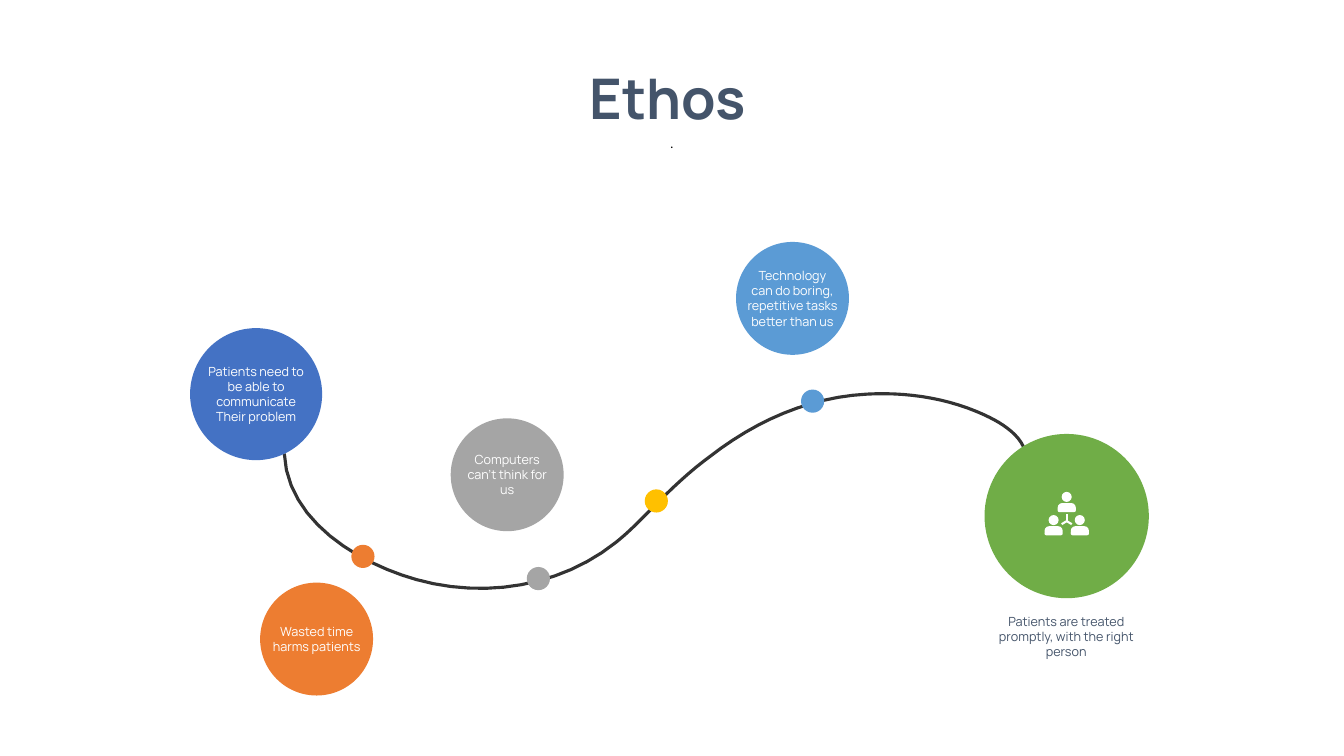
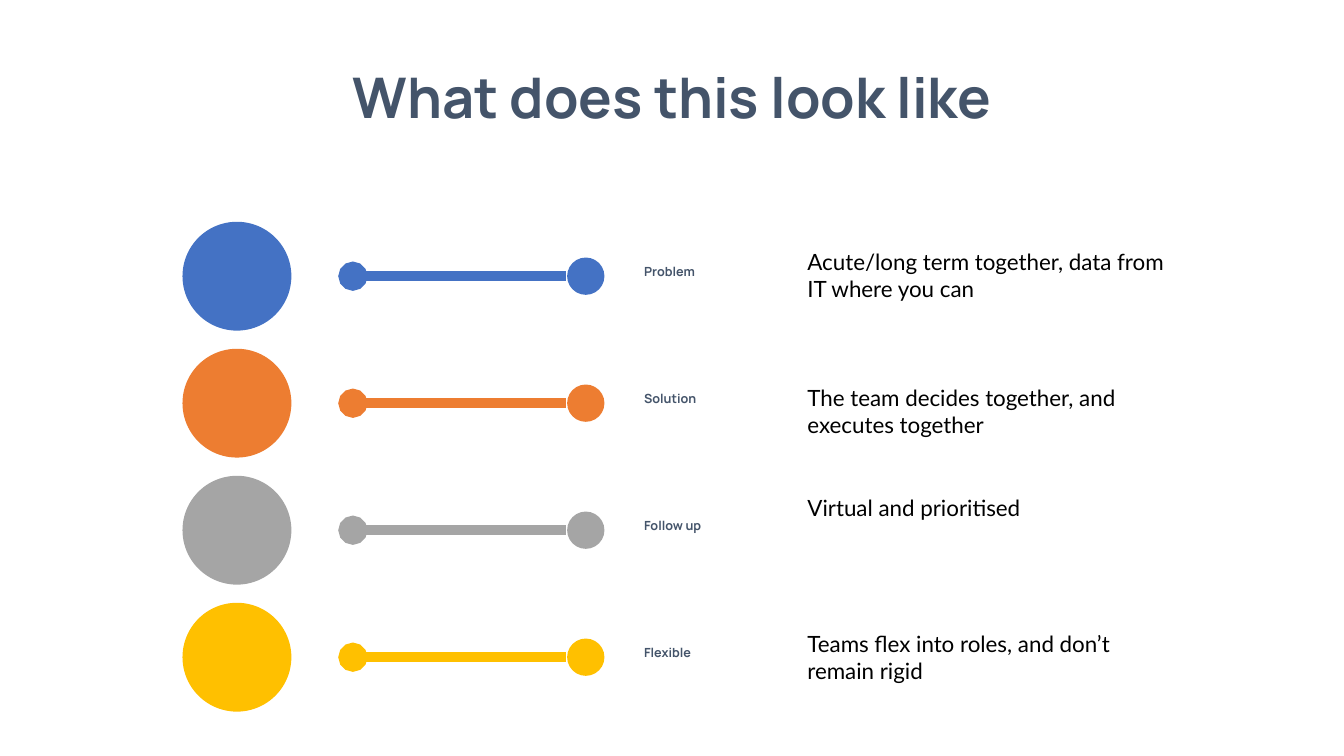
"""Build the ethos path and the practice rows as two slides."""
import lxml.etree
import pptx
import pptx.dml.color
import pptx.enum.shapes
import pptx.enum.text
import pptx.oxml.ns
import pptx.util

Inches = pptx.util.Inches
RGBColor = pptx.dml.color.RGBColor
SHAPE = pptx.enum.shapes.MSO_SHAPE
ALIGN = pptx.enum.text.PP_ALIGN

BLUE = RGBColor(0x44, 0x72, 0xC4)
ORANGE = RGBColor(0xED, 0x7D, 0x31)
GREY = RGBColor(0xA5, 0xA5, 0xA5)
GOLD = RGBColor(0xFF, 0xC0, 0x00)
SKY = RGBColor(0x5B, 0x9B, 0xD5)
GREEN = RGBColor(0x70, 0xAD, 0x47)
SLATE = RGBColor(0x44, 0x54, 0x6A)
DARK = RGBColor(0x33, 0x33, 0x33)
WHITE = RGBColor(0xFF, 0xFF, 0xFF)
BLACK = RGBColor(0x00, 0x00, 0x00)

TITLE = {"name": "Manrope", "size": pptx.util.Pt(40), "bold": True}
LABEL = {"name": "Manrope", "size": pptx.util.Pt(9), "bold": True}
NOTE = {"name": "Manrope", "size": pptx.util.Pt(9)}
SMALL = {"name": "Lato", "size": pptx.util.Pt(9)}
BODY = {"name": "Lato", "size": pptx.util.Pt(16)}

CURVE = (
    ((0, 0.62), (0.03, 1.29), (0.74, 1.71), (1.31, 1.87)),
    ((1.31, 1.87), (1.99, 2.06), (2.74, 1.94), (3.29, 1.5)),
    ((3.29, 1.5), (3.44, 1.38), (3.57, 1.24), (3.7, 1.11)),
    ((3.7, 1.11), (3.87, 0.94), (4.03, 0.79), (4.22, 0.65)),
    ((4.22, 0.65), (4.67, 0.3), (5.2, 0.06), (5.78, 0.03)),
    ((5.78, 0.03), (6.14, 0.01), (6.52, 0.06), (6.86, 0.2)),
    ((6.86, 0.2), (7.03, 0.27), (7.25, 0.38), (7.33, 0.55)),
)
STOPS = (
    (2.54, 3.91, 1.31, BLUE, 1.33, 4,
     ("Patients need to", "be able to communicate", "Their problem")),
    (3.14, 6.34, 1.12, ORANGE, 1.15, 2, ("Wasted time", "harms patients")),
    (5.03, 4.71, 1.12, GREY, 1.05, 3, ("Computers", "can’t think for us")),
    (7.86, 2.96, 1.12, SKY, 1.33, 4,
     ("Technology", "can do boring,", "repetitive tasks better than us")),
)
DOTS = ((3.6, 5.52, ORANGE), (5.34, 5.74, GREY), (6.51, 4.97, GOLD), (8.06, 3.98, SKY))
ROWS = (
    (BLUE, "Problem", "Acute/long term together, data from IT where you can", -0.33, 0.64),
    (ORANGE, "Solution", "The team decides together, and executes together", -0.24, 0.64),
    (GREY, "Follow up", "Virtual and prioritised", -0.41, 0.37),
    (GOLD, "Flexible", "Teams flex into roles, and don’t remain rigid", -0.32, 0.64),
)


def write(slide, box, lines, style, ink, align=ALIGN.LEFT, wrap=True):
    """Add a text box with one paragraph for each line."""
    frame = slide.shapes.add_textbox(*map(Inches, box)).text_frame
    frame.word_wrap = wrap
    frame.auto_size = pptx.enum.text.MSO_AUTO_SIZE.SHAPE_TO_FIT_TEXT
    for n, line in enumerate(lines):
        para = frame.add_paragraph() if n else frame.paragraphs[0]
        para.alignment = align
        run = para.add_run()
        run.text = line
        for key, value in style.items():
            setattr(run.font, key, value)
        run.font.color.rgb = ink


def head(slide, box, text):
    """Add the slide title."""
    write(slide, box, [text], TITLE, SLATE, ALIGN.CENTER, False)


def solid(parent, kind, box, fill):
    """Add a plain filled shape."""
    shape = parent.shapes.add_shape(kind, *map(Inches, box))
    shape.shadow.inherit = False
    shape.fill.solid()
    shape.fill.fore_color.rgb = fill
    shape.line.fill.background()
    return shape


def disc(parent, x, y, size, fill):
    """Add a circle around a centre point."""
    return solid(parent, SHAPE.OVAL, (x - size / 2, y - size / 2, size, size), fill)


def link(parent, start, end, ink, width):
    """Add a straight line without a shadow."""
    line = parent.shapes.add_connector(
        pptx.enum.shapes.MSO_CONNECTOR.STRAIGHT, *map(Inches, start + end))
    line.line.color.rgb = ink
    line.line.width = pptx.util.Pt(width)
    lxml.etree.SubElement(line._element.spPr, pptx.oxml.ns.qn("a:effectLst"))
    return line


def bend(a, b, c, d, steps=12):
    """Return points along a cubic curve, after its start."""
    times = [n / steps for n in range(1, steps + 1)]
    return [
        tuple(Inches((1 - t) ** 3 * p + 3 * (1 - t) ** 2 * t * q
                     + 3 * (1 - t) * t * t * r + t ** 3 * s)
              for p, q, r, s in zip(a, b, c, d))
        for t in times
    ]


def trail(slide, x, y):
    """Draw the winding path from its top left corner."""
    points = [point for part in CURVE for point in bend(*part)]
    pen = slide.shapes.build_freeform(*map(Inches, CURVE[0][0]))
    pen.add_line_segments(points, close=False)
    path = pen.convert_to_shape(Inches(x), Inches(y))
    path.shadow.inherit = False
    path.fill.background()
    path.line.color.rgb = DARK
    path.line.width = pptx.util.Pt(2.25)


def stop(slide, x, y, size, fill, width, count, lines):
    """Add a circle with its caption in the middle."""
    disc(slide, x, y, size, fill)
    tall = 0.1 + 0.15 * count
    write(slide, (x - width / 2, y - tall / 2, width, tall), lines, NOTE, WHITE, ALIGN.CENTER)


def team(slide, x, y):
    """Draw three linked people around a centre point."""
    group = slide.shapes.add_group_shape()
    for dx, dy in ((0, -0.17), (-0.13, 0.06), (0.13, 0.06)):
        disc(group, x + dx, y + dy, 0.1, WHITE)
        chest = solid(group, SHAPE.ROUND_2_SAME_RECTANGLE,
                      (x + dx - 0.09, y + dy + 0.06, 0.18, 0.09), WHITE)
        chest.adjustments[0] = 0.5
        chest.adjustments[1] = 0.2
    for dx, dy in ((0, 0), (-0.05, 0.1), (0.05, 0.1)):
        link(group, (x, y + 0.07), (x + dx, y + dy), WHITE, 1.5)


def goal(slide, x, y):
    """Add the final circle, its icon and its caption."""
    disc(slide, x, y, 1.63, GREEN)
    team(slide, x, y - 0.02)
    write(slide, (x - 0.94, y + 0.92, 1.87, 0.4),
          ["Patients are treated promptly, with the right person"], NOTE, SLATE, ALIGN.CENTER)


def ethos(slide):
    """Fill the slide with the path of ideas."""
    head(slide, (5.73, 0.58, 1.78, 0.77), "Ethos")
    write(slide, (1.46, 1.3, 10.41, 0.25), ["."], SMALL, BLACK, ALIGN.CENTER)
    trail(slide, 2.82, 3.88)
    for item in STOPS:
        stop(slide, *item)
    for x, y, fill in DOTS:
        disc(slide, x, y, 0.23, fill)
    goal(slide, 10.58, 5.12)


def row(slide, x, y, fill, label, text, shift, tall):
    """Add one row from its left edge and middle line."""
    disc(slide, x + 0.54, y, 1.08, fill)
    line = link(slide, (x + 3.8, y), (x + 1.69, y), fill, 7)
    lxml.etree.SubElement(line.line._get_or_add_ln(), pptx.oxml.ns.qn("a:tailEnd"), type="oval")
    disc(slide, x + 4, y, 0.37, fill)
    write(slide, (x + 4.48, y - 0.17, 2, 0.25), [label], LABEL, SLATE)
    write(slide, (x + 6.1, y + shift, 3.82, tall), [text], BODY, BLACK)


def look(slide):
    """Fill the slide with the rows of practice."""
    head(slide, (3.17, 0.57, 6.99, 0.77), "What does this look like")
    for n, item in enumerate(ROWS):
        row(slide, 1.81, 2.74 + 1.26 * n, *item)


def main():
    """Build and save the deck."""
    deck = pptx.Presentation()
    deck.slide_width, deck.slide_height = Inches(13.33), Inches(7.5)
    for fill in (ethos, look):
        fill(deck.slides.add_slide(deck.slide_layouts[6]))
    deck.save("out.pptx")


if __name__ == "__main__":
    main()
